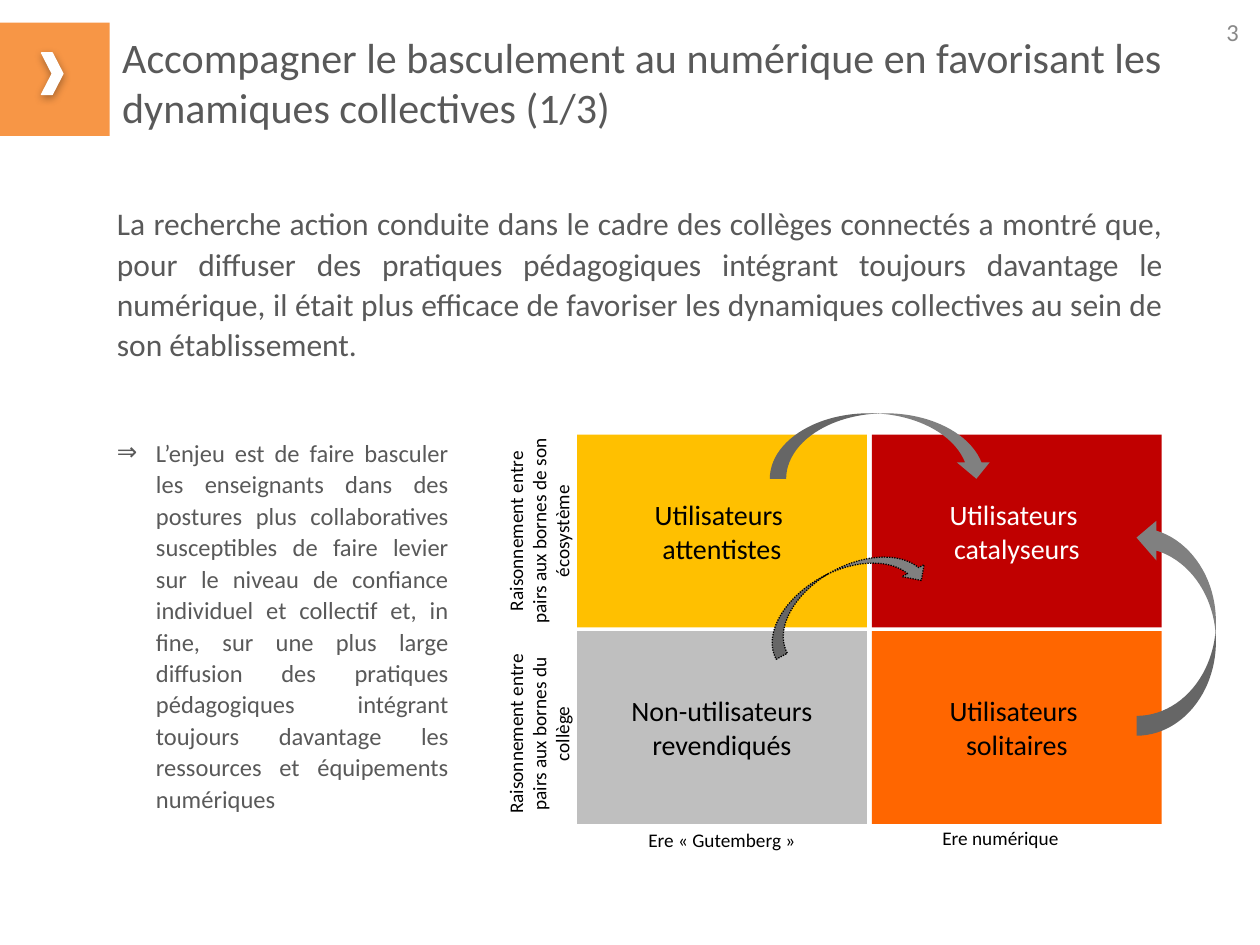
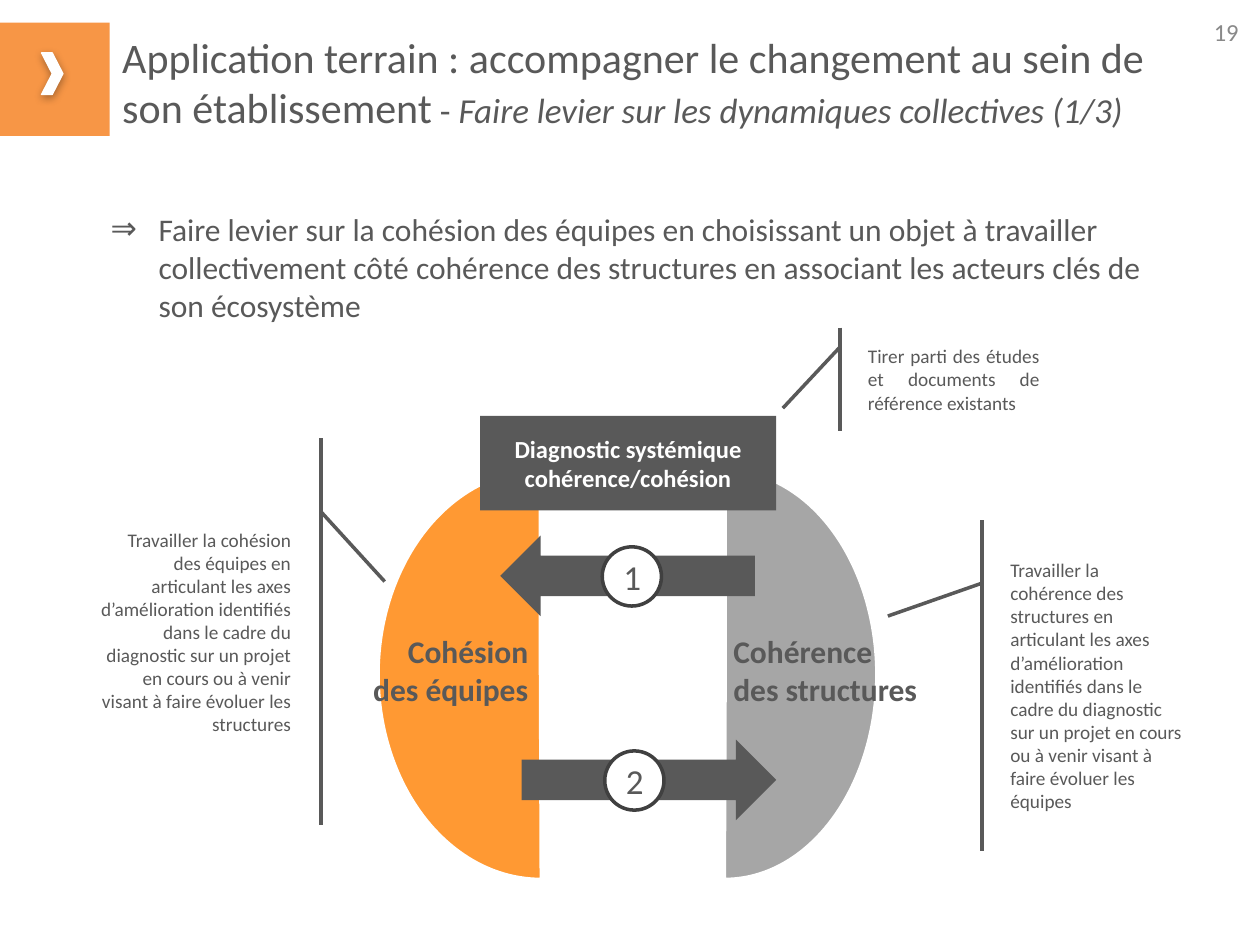
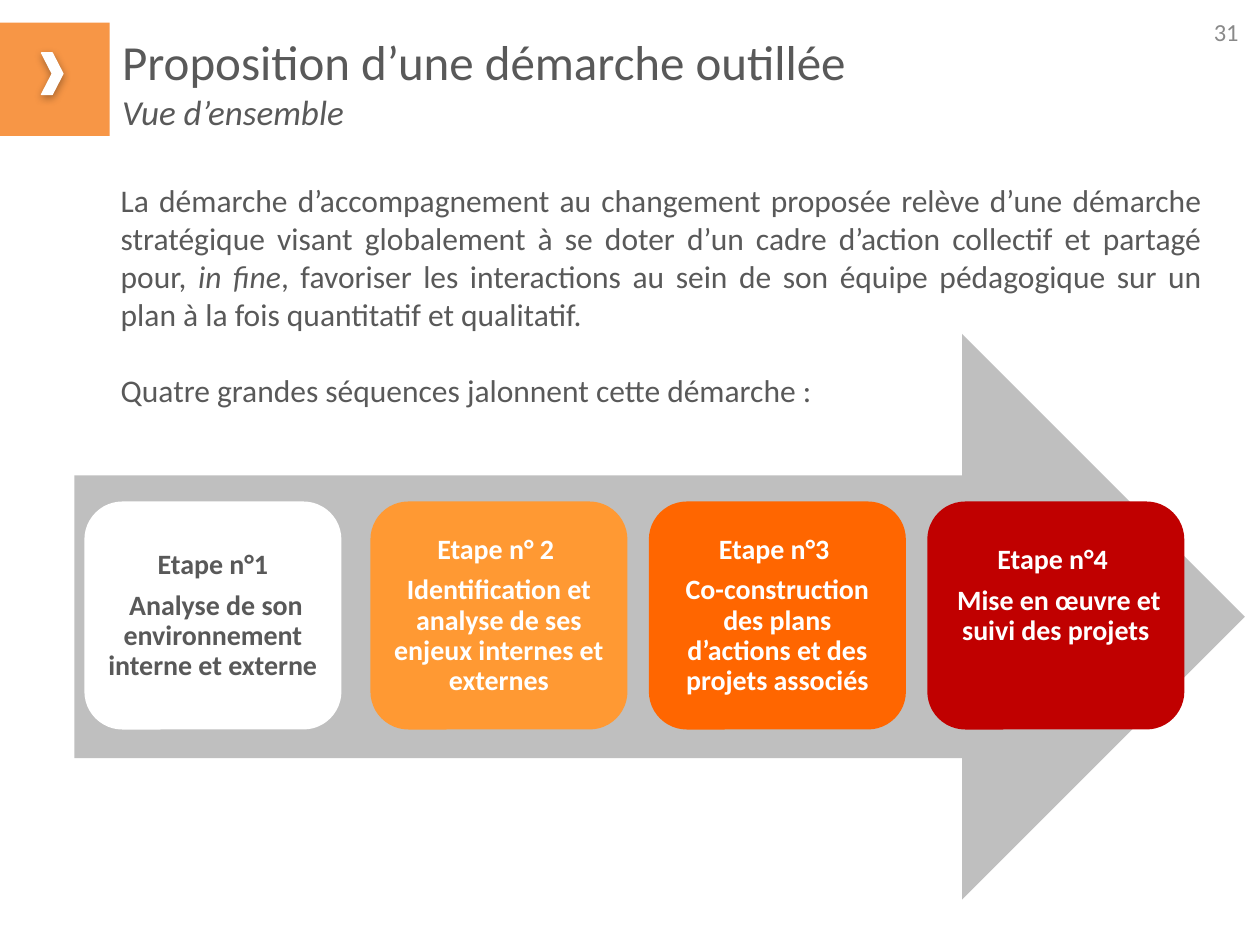
from lxml.etree import SubElement
from pptx import Presentation
from pptx.dml.color import RGBColor
from pptx.enum.dml import MSO_LINE
from pptx.enum.shapes import MSO_SHAPE
from pptx.enum.text import MSO_ANCHOR, MSO_AUTO_SIZE, PP_ALIGN
from pptx.oxml.ns import qn
from pptx.util import Inches, Pt

FONT = "Calibri"
SLIDE_WIDTH, SLIDE_HEIGHT = 10, 7.5
COLORS = {
    "band": "F79646", "text": "595959", "number": "898989", "white": "FFFFFF", "black": "000000",
    "yellow": "FFC000", "red": "C00000", "silver": "BFBFBF", "orange": "FF6600",
    "arrow": "808080", "gray": "A6A6A6", "amber": "FF9933", "outline": "404040",
}
LEFT, CENTER, RIGHT, JUSTIFY = PP_ALIGN.LEFT, PP_ALIGN.CENTER, PP_ALIGN.RIGHT, PP_ALIGN.JUSTIFY
MIDDLE = MSO_ANCHOR.MIDDLE

# A paragraph is a string, or a list of runs: (text, format overrides).
COLLECTIVE = {
    "number": "3", "title_size": 24,
    "title": ["Accompagner le basculement au numérique en favorisant les dynamiques collectives (1/3)"],
    "intro": "La recherche action conduite dans le cadre des collèges connectés a montré que, pour diffuser "
             "des pratiques pédagogiques intégrant toujours davantage le numérique, il était plus efficace "
             "de favoriser les dynamiques collectives au sein de son établissement.",
    "stake": "L’enjeu est de faire basculer les enseignants dans des postures plus collaboratives "
             "susceptibles de faire levier sur le niveau de confiance individuel et collectif et, in fine, "
             "sur une plus large diffusion des pratiques pédagogiques intégrant toujours davantage les "
             "ressources et équipements numériques",
    # column, row, paragraphs, fill, text color
    "quadrants": [
        (0, 0, ["Utilisateurs ", "attentistes"], "yellow", "black"),
        (1, 0, ["Utilisateurs ", "catalyseurs"], "red", "white"),
        (0, 1, ["Non-utilisateurs revendiqués"], "silver", "black"),
        (1, 1, ["Utilisateurs ", "solitaires"], "orange", "black"),
    ],
    # box, rotation, flipped vertically, dotted outline
    "transitions": [
        ((6.11, 3.28, 1.77, 0.52), 0, False, False),
        ((8.47, 4.66, 1.73, 0.63), 270, True, False),
        ((5.98, 4.52, 1.41, 0.4), 331.5, False, True),
    ],
    # box, rotation, label
    "axes": [
        ((4.58, 6.57, 2.3, 0.25), 0, "Ere « Gutemberg »"),
        ((6.79, 6.56, 2.3, 0.25), 0, "Ere numérique"),
        ((3.51, 5.53, 1.53, 0.59), 270, "Raisonnement entre pairs aux bornes du collège"),
        ((3.51, 3.92, 1.53, 0.59), 270, "Raisonnement entre pairs aux bornes de son écosystème"),
    ],
}
FIELD = {
    "number": "19", "title_size": 24,
    "title": [[("Application terrain : accompagner le changement au sein de son établissement", {}),
               (" - ", {"size": 20}),
               ("Faire levier sur les dynamiques collectives (1/3)", {"size": 20, "italic": True})]],
    "lever": "Faire levier sur la cohésion des équipes en choisissant un objet à travailler collectivement "
             "côté cohérence des structures en associant les acteurs clés de son écosystème",
    # box, flipped, fill
    "halves": [((4.55, 3.73, 2.41, 3.25), True, "gray"), ((3, 3.73, 2.58, 3.25), False, "amber")],
    "diagnosis": "Diagnostic systémique cohérence/cohésion",
    # left, paragraphs, alignment
    "poles": [(2.3, ["Cohésion ", "des équipes "], RIGHT), (5.82, ["Cohérence", "des structures"], LEFT)],
    # arrow left, top, rotation, number left, number
    "moves": [(3.97, 4.25, 180, 4.78, "1"), (4.14, 5.87, 0, 4.8, "2")],
    # box, pointer end (down, across), flipped, alignment, text
    "callouts": [
        ((6.79, 2.6, 1.56, 0.82), (0.78, -0.37), False, JUSTIFY,
         "Tirer parti des études et documents de référence existants"),
        ((7.92, 4.13, 1.56, 2.62), (0.29, -0.56), False, LEFT,
         "Travailler la cohérence des structures en articulant les axes d’amélioration identifiés dans le "
         "cadre du diagnostic sur un projet en cours ou à venir visant à faire évoluer les équipes"),
        ((0.67, 3.48, 1.74, 3.07), (0.37, -0.37), True, RIGHT,
         "Travailler la cohésion des équipes en articulant les axes d’amélioration identifiés dans le "
         "cadre du diagnostic sur un projet en cours ou à venir visant à faire évoluer les structures"),
    ],
}
APPROACH = {
    "number": "31", "title_size": 28,
    "title": ["Proposition d’une démarche outillée", [("Vue d’ensemble", {"size": 20, "italic": True})]],
    "intro": [
        [("La démarche d’accompagnement au changement proposée relève d’une démarche stratégique visant "
          "globalement à se doter d’un cadre d’action collectif et partagé pour, ", {}),
         ("in fine", {"italic": True}),
         (", favoriser les interactions au sein de son équipe pédagogique sur un plan à la fois "
          "quantitatif et qualitatif.", {})],
        "Quatre grandes séquences jalonnent cette démarche :",
    ],
    # left, paragraphs, fill, text color, bottom inset
    "steps": [
        (0.67, ["Etape n°1", " Analyse de son environnement interne et externe"], "white", "text", 0.07),
        (2.94, ["Etape n° 2 ", "Identification et analyse de ses enjeux internes et externes"],
         "amber", "white", 0.07),
        (5.15, ["Etape n°3 ", "Co-construction des plans d’actions et des projets associés"],
         "orange", "white", 0.07),
        (7.36, ["Etape n°4 ", " Mise en œuvre et suivi des projets"], "red", "white", 0.39),
    ],
}


def rgb(name):
    return RGBColor.from_string(COLORS[name])


def inches(box):
    return [Inches(length) for length in box]


def add_bullet(paragraph, indent):
    properties = paragraph._p.get_or_add_pPr()
    properties.set("marL", str(Inches(indent)))
    properties.set("indent", str(-Inches(indent)))
    SubElement(properties, qn("a:buFont"), typeface=FONT)
    SubElement(properties, qn("a:buChar"), char="⇒")


def write(shape, paragraphs, size=18, color="text", bold=False, align=LEFT, anchor=None,
          insets=(0.1, 0.05, 0.1, 0.05), line_spacing=None, after=0, gap=0, bullet_indent=None):
    """Fill a shape with paragraphs; gap is the space in points between two of them."""
    frame = shape.text_frame
    frame.word_wrap = True
    frame.auto_size = MSO_AUTO_SIZE.NONE
    frame.vertical_anchor = anchor
    frame.margin_left, frame.margin_top, frame.margin_right, frame.margin_bottom = inches(insets)
    for index, content in enumerate(paragraphs):
        paragraph = frame.add_paragraph() if index else frame.paragraphs[0]
        paragraph.alignment = align
        paragraph.line_spacing = line_spacing
        paragraph.space_before = Pt(gap if index else 0)
        paragraph.space_after = Pt(after)
        if bullet_indent:
            add_bullet(paragraph, bullet_indent)
        for text, override in [(content, {})] if isinstance(content, str) else content:
            run = paragraph.add_run()
            run.text = text
            run.font.name = FONT
            run.font.size = Pt(override.get("size", size))
            run.font.bold = bold
            run.font.italic = override.get("italic", False)
            run.font.color.rgb = rgb(color)


def add_text(slide, box, paragraphs, rotation=0, **text_format):
    text_box = slide.shapes.add_textbox(*inches(box))
    text_box.rotation = rotation
    write(text_box, paragraphs, **text_format)


def add_shape(slide, kind, box, fill=None, line=None, width=2, rotation=0, flip=None, adjustments=()):
    """Add a flat preset shape; flip is the attribute flipH or flipV."""
    shape = slide.shapes.add_shape(kind, *inches(box))
    shape.shadow.inherit = False
    shape.rotation = rotation
    for index, value in enumerate(adjustments):
        shape.adjustments[index] = value
    if fill:
        shape.fill.solid()
        shape.fill.fore_color.rgb = rgb(fill)
    else:
        shape.fill.background()
    if line:
        shape.line.color.rgb = rgb(line)
        shape.line.width = Pt(width)
    else:
        shape.line.fill.background()
    if flip:
        shape.element.spPr.find(qn("a:xfrm")).set(flip, "1")
    return shape


def add_soft_shadow(shape):
    effects = shape.element.spPr.find(qn("a:effectLst"))
    shadow = SubElement(effects, qn("a:outerShdw"), blurRad=str(Pt(5)), dist=str(Pt(1.8)),
                        dir="5400000", rotWithShape="0")
    color = SubElement(shadow, qn("a:srgbClr"), val=COLORS["black"])
    SubElement(color, qn("a:alpha"), val="35000")


def start_slide(presentation, content):
    """Add a slide with its title, orange band, chevron and number."""
    slide = presentation.slides.add_slide(presentation.slide_layouts[5])
    title = slide.shapes.title
    title.left, title.top, title.width, title.height = inches((0.88, 0.2, 8.45, 0.9))
    write(title, content["title"], size=content["title_size"], anchor=MIDDLE,
          insets=(0.09, 0.05, 0.09, 0.05))
    add_shape(slide, MSO_SHAPE.RECTANGLE, (0, 0.18, 0.87, 0.9), "band")
    chevron = add_shape(slide, MSO_SHAPE.CHEVRON, (0.33, 0.42, 0.17, 0.33), "white", "white", 0.75)
    add_soft_shadow(chevron)
    add_text(slide, (7.6, 0.05, 2.33, 0.4), [content["number"]], size=14, color="number",
             align=RIGHT, anchor=MIDDLE)
    return slide


def build_collective(presentation):
    content = COLLECTIVE
    slide = start_slide(presentation, content)
    add_text(slide, (0.83, 1.55, 8.5, 1.4), [content["intro"]], align=JUSTIFY, line_spacing=1.07, after=8)
    for column, row, paragraphs, fill, color in content["quadrants"]:
        box = (4.58 + 2.34 * column, 3.45 + 1.56 * row, 2.3, 1.53)
        quadrant = add_shape(slide, MSO_SHAPE.RECTANGLE, box, fill)
        write(quadrant, paragraphs, size=16, color=color, align=CENTER, anchor=MIDDLE)
    for box, rotation, flipped, dotted in content["transitions"]:
        arrow = add_shape(slide, MSO_SHAPE.CURVED_DOWN_ARROW, box, "arrow", "black" if dotted else None,
                          0.75, rotation, "flipV" if flipped else None)
        if dotted:
            arrow.line.dash_style = MSO_LINE.ROUND_DOT
    for box, rotation, label in content["axes"]:
        add_text(slide, box, [label], rotation, size=11, color="black", align=CENTER,
                 anchor=MIDDLE if rotation else None, insets=(0, 0, 0, 0))
    add_text(slide, (0.83, 3.41, 2.83, 3.49), [content["stake"]], size=14, align=JUSTIFY,
             line_spacing=1.07, after=8, bullet_indent=0.31)


def build_field(presentation):
    content = FIELD
    slide = start_slide(presentation, content)
    add_text(slide, (0.78, 1.62, 8.78, 4.95), [content["lever"]], bullet_indent=0.38)
    for box, flipped, fill in content["halves"]:
        add_shape(slide, MSO_SHAPE.PIE, box, fill, "white", flip="flipH" if flipped else None,
                  adjustments=(53.87, 162))
    diagnosis = add_shape(slide, MSO_SHAPE.RECTANGLE, (3.81, 3.3, 2.35, 0.75), "text")
    write(diagnosis, [content["diagnosis"]], size=14, color="white", bold=True, align=CENTER, anchor=MIDDLE)
    for left, paragraphs, align in content["poles"]:
        add_text(slide, (left, 5.15, 1.95, 0.33), paragraphs, bold=True, align=align, anchor=MIDDLE,
                 insets=(0, 0.05, 0, 0.05))
    for left, top, rotation, number_left, number in content["moves"]:
        add_shape(slide, MSO_SHAPE.RIGHT_ARROW, (left, top, 2.02, 0.64), "text", rotation=rotation)
        disc = add_shape(slide, MSO_SHAPE.OVAL, (number_left, top + 0.09, 0.47, 0.47), "white", "outline")
        write(disc, [number], size=20, align=CENTER, anchor=MIDDLE)
    for box, pointer_end, flipped, align, text in content["callouts"]:
        callout = add_shape(slide, MSO_SHAPE.LINE_CALLOUT_1_ACCENT_BAR, box, line="text",
                            flip="flipH" if flipped else None, adjustments=(0.19, -0.08, *pointer_end))
        write(callout, [text], size=11, align=align, anchor=MIDDLE)


def build_approach(presentation):
    content = APPROACH
    slide = start_slide(presentation, content)
    add_text(slide, (0.86, 1.39, 8.78, 4.95), content["intro"], align=JUSTIFY, gap=22)
    add_shape(slide, MSO_SHAPE.RIGHT_ARROW, (0.59, 2.65, 9.29, 4.49), "silver")
    for left, paragraphs, fill, color, bottom in content["steps"]:
        add_shape(slide, MSO_SHAPE.ROUNDED_RECTANGLE, (left, 3.98, 2.04, 1.81), fill)
        add_text(slide, (left + 0.09, 4.07, 1.86, 1.64), paragraphs, size=16, color=color, bold=True,
                 align=CENTER, anchor=MIDDLE, insets=(0.07, 0.07, 0.07, bottom), line_spacing=0.9, gap=5.7)


def main():
    presentation = Presentation()
    presentation.slide_width, presentation.slide_height = inches((SLIDE_WIDTH, SLIDE_HEIGHT))
    for build in (build_collective, build_field, build_approach):
        build(presentation)
    presentation.save("out.pptx")


if __name__ == "__main__":
    main()
